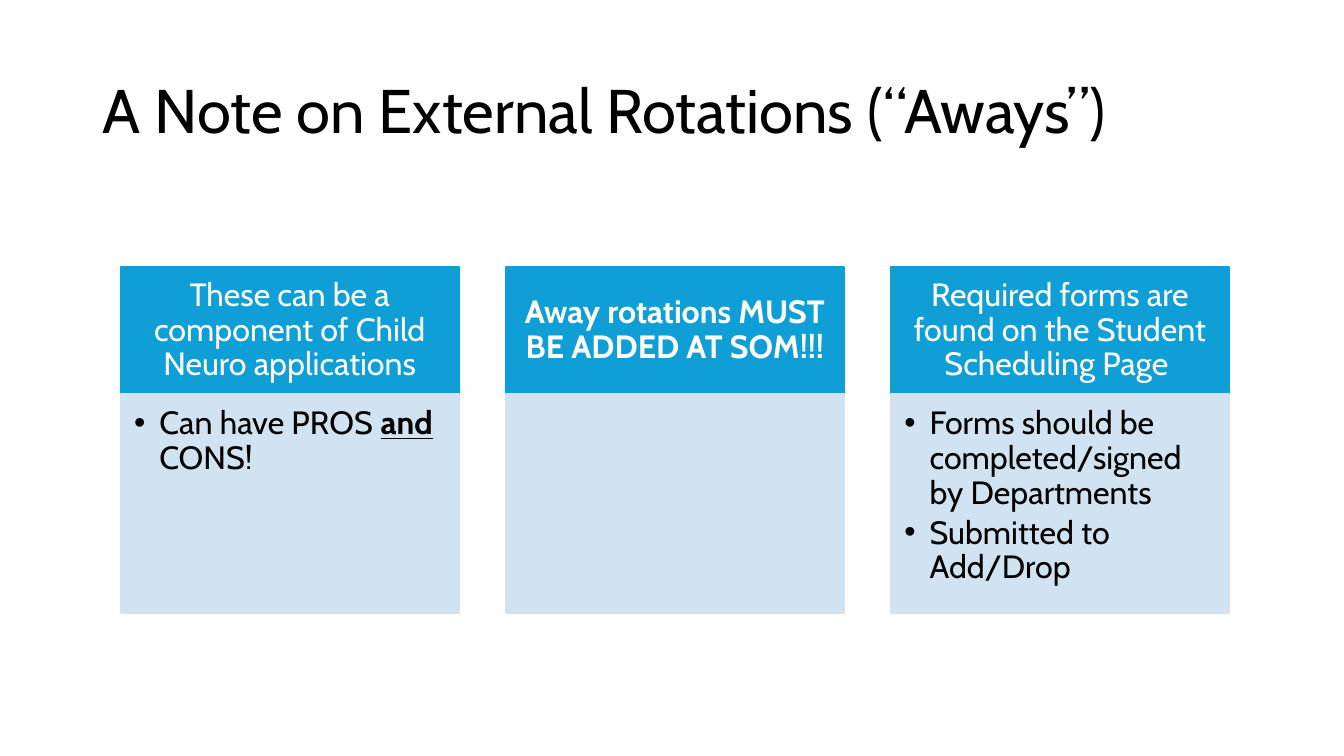
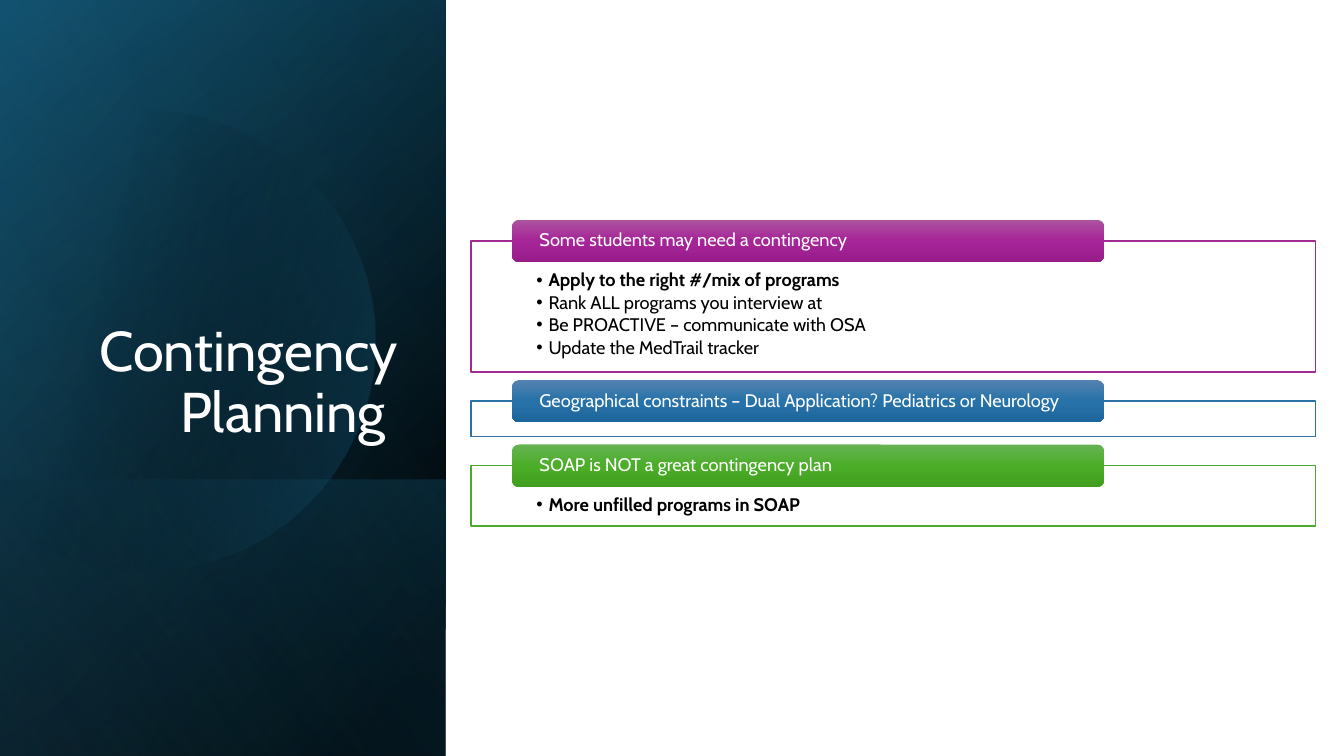
from dataclasses import dataclass

from lxml.etree import SubElement as Sub
from pptx import Presentation
from pptx.dml.color import RGBColor as Rgb
from pptx.enum.shapes import MSO_SHAPE as Kind
from pptx.enum.text import MSO_ANCHOR as Anchor, MSO_AUTO_SIZE as Fit, PP_ALIGN as Align
from pptx.oxml.ns import qn
from pptx.util import Inches, Pt

FONT = "Cabin"
HUES = {
    "black": "000000",
    "white": "FFFFFF",
    "head": "0F9ED5",
    "body": "D1E2F0",
    "navy": "104862",
    "teal": "156082",
    "sky": "46B1E1",
    "plum": "A02B93",
    "blue": "2C71A4",
    "green": "4EA72E",
}


@dataclass(frozen=True)
class Box:
    left: float
    top: float
    width: float
    height: float

    def lengths(self) -> list:
        return [Inches(n) for n in (self.left, self.top, self.width, self.height)]


@dataclass(frozen=True)
class Run:
    text: str
    bold: bool = False
    under: bool = False


@dataclass(frozen=True)
class Style:
    size: float
    hue: str
    inset: tuple = (0.1, 0.05, 0.1, 0.05)
    align: Align = Align.LEFT
    anchor: Anchor = Anchor.MIDDLE
    indent: float = 0


@dataclass(frozen=True)
class Stop:
    place: int
    hex: str
    alpha: int = 100


@dataclass(frozen=True)
class Layer:
    top: float
    angle: float
    stops: tuple


@dataclass(frozen=True)
class Card:
    head: Run
    points: tuple = ()


@dataclass(frozen=True)
class Band:
    head: str
    hue: str
    shades: tuple
    height: float
    points: tuple = ()


HEAD = Style(23, "white", (0.18, 0.1, 0.18, 0.1), Align.CENTER)
BODY = Style(23, "black", (0.13, 0.13, 0.18, 0.2), anchor=Anchor.TOP, indent=0.25)
BAR = Style(13, "white", (0.25, 0, 0.25, 0))
LIST = Style(13, "black", (0.65, 0.3, 0.65, 0.1), anchor=Anchor.TOP, indent=0.12)

CARDS = (
    Card(
        Run("These can be a component of Child Neuro applications"),
        ((Run("Can have PROS "), Run("and", True, True), Run(" CONS!")),),
    ),
    Card(Run("Away rotations MUST BE ADDED AT SOM!!! ", True)),
    Card(
        Run("Required forms are found on the Student Scheduling Page "),
        (
            (Run("Forms should be completed/signed by Departments"),),
            (Run("Submitted to Add/Drop"),),
        ),
    ),
)

BANDS = (
    Band(
        "Some students may need a contingency",
        "plum",
        ("AC53A0", "A62598", "991C8B"),
        1.3,
        (
            (Run("Apply to the right #/mix of programs", True),),
            (Run("Rank ALL programs you interview at"),),
            (Run("Be PROACTIVE – communicate with OSA"),),
            (Run("Update the MedTrail tracker"),),
        ),
    ),
    Band(
        "Geographical constraints – Dual Application? Pediatrics or Neurology",
        "blue",
        ("5382AF", "2772A9", "1D669C"),
        0.35,
    ),
    Band(
        "SOAP is NOT a great contingency plan",
        "green",
        ("66B354", "4BAD28", "409F1E"),
        0.6,
        ((Run("More unfilled programs in SOAP", True),),),
    ),
)

PANEL = (4.42, 7.5)
BACK = (
    Layer(0, 220, (Stop(8, HUES["black"]), Stop(100, HUES["navy"]))),
    Layer(0, 240, (Stop(0, HUES["black"], 0), Stop(99, HUES["teal"], 46))),
    Layer(4.76, 140, (Stop(2, HUES["teal"], 29), Stop(100, HUES["black"], 30))),
)
DISC = (Stop(29, HUES["black"], 0), Stop(100, HUES["teal"], 43))
GLOW = Layer(0, 150, (Stop(0, HUES["black"], 0), Stop(99, HUES["sky"], 11)))
CURVES = (
    ((1.49, 1.1), (2.46, 1.12), (3.35, 1.77), (3.63, 2.75)),
    ((3.63, 2.75), (3.98, 3.97), (3.28, 5.23), (2.07, 5.58)),
    ((2.07, 5.58), (1.31, 5.8), (0.53, 5.61), (0, 5.14)),
    ((0, 1.61), (0.23, 1.42), (0.5, 1.28), (0.8, 1.19)),
    ((0.8, 1.19), (1.03, 1.13), (1.26, 1.1), (1.49, 1.1)),
)


def tint(hue: str) -> Rgb:
    return Rgb.from_string(HUES[hue])


def shade(shape, stops: tuple, angle: float) -> None:
    shape.fill.solid()
    shape.line.fill.background()
    shape.shadow.inherit = False
    solid = shape.element.spPr.find(qn("a:solidFill"))
    grad = Sub(shape.element.spPr, qn("a:gradFill"), rotWithShape="1")
    items = Sub(grad, qn("a:gsLst"))
    for stop in stops:
        item = Sub(items, qn("a:gs"), pos=str(stop.place * 1000))
        color = Sub(item, qn("a:srgbClr"), val=stop.hex)
        if stop.alpha < 100:
            Sub(color, qn("a:alpha"), val=str(stop.alpha * 1000))
    Sub(grad, qn("a:lin"), ang=str(round(angle * 60000)), scaled="0")
    shape.element.spPr.replace(solid, grad)


def block(slide, box: Box, fill: str, line: str, weight: float):
    shape = slide.shapes.add_shape(Kind.RECTANGLE, *box.lengths())
    shape.shadow.inherit = False
    shape.fill.solid()
    shape.fill.fore_color.rgb = tint(fill)
    shape.line.color.rgb = tint(line)
    shape.line.width = Pt(weight)
    return shape


def write(shape, lines: tuple, style: Style) -> None:
    frame = shape.text_frame
    frame.word_wrap = True
    frame.auto_size = Fit.NONE
    frame.vertical_anchor = style.anchor
    sides = [Inches(n) for n in style.inset]
    frame.margin_left, frame.margin_top, frame.margin_right, frame.margin_bottom = sides
    for i, runs in enumerate(lines):
        para = frame.add_paragraph() if i else frame.paragraphs[0]
        para.alignment = style.align
        para.line_spacing = 0.9
        if style.indent:
            para.space_after = Pt(style.size * 0.15)
            props = para._p.get_or_add_pPr()
            props.set("marL", str(Inches(style.indent)))
            props.set("indent", str(-Inches(style.indent)))
            Sub(props, qn("a:buFont"), typeface="Arial")
            Sub(props, qn("a:buChar"), char="•")
        for part in runs:
            run = para.add_run()
            run.text = part.text
            font = run.font
            font.name, font.size = FONT, Pt(style.size)
            font.bold, font.underline = part.bold, part.under
            font.color.rgb = tint(style.hue)


def name(slide, text: str, box: Box, style: Style) -> None:
    title = slide.shapes.title
    title.left, title.top, title.width, title.height = box.lengths()
    write(title, ((Run(text),),), style)
    title.element.getparent().append(title.element)


def cover(slide, layer: Layer) -> None:
    box = Box(0, layer.top, PANEL[0], PANEL[1] - layer.top)
    shape = slide.shapes.add_shape(Kind.RECTANGLE, *box.lengths())
    shade(shape, layer.stops, layer.angle)


def trace(curve: tuple, steps: int = 16) -> list:
    spots = []
    for i in range(steps + 1):
        t = i / steps
        parts = ((1 - t) ** 3, 3 * t * (1 - t) ** 2, 3 * t * t * (1 - t), t ** 3)
        x, y = (sum(w * p[k] for w, p in zip(parts, curve)) for k in (0, 1))
        spots.append((Inches(x), Inches(y)))
    return spots


def draw_disc(slide) -> None:
    spots = [spot for curve in CURVES for spot in trace(curve)]
    path = slide.shapes.build_freeform(*spots[0])
    path.add_line_segments(spots[1:], close=True)
    shade(path.convert_to_shape(), DISC, 13.9)


def draw_card(slide, card: Card, left: float) -> None:
    head = block(slide, Box(left, 2.65, 3.35, 1.26), "head", "head", 1.5)
    write(head, ((card.head,),), HEAD)
    body = block(slide, Box(left, 3.91, 3.35, 2.17), "body", "body", 1.5)
    if card.points:
        write(body, card.points, BODY)


def draw_band(slide, band: Band, top: float) -> None:
    frame = block(slide, Box(4.67, top, 8.38, band.height), "white", band.hue, 1)
    if band.points:
        write(frame, band.points, LIST)
    box = Box(5.08, top - 0.21, 5.87, 0.42)
    bar = slide.shapes.add_shape(Kind.ROUNDED_RECTANGLE, *box.lengths())
    shade(bar, tuple(Stop(i * 50, c) for i, c in enumerate(band.shades)), 90)
    write(bar, ((Run(band.head),),), BAR)


def draw_aways(slide) -> None:
    name(slide, "A Note on External Rotations (“Aways”)",
         Box(0.92, 0.4, 11.5, 1.45), Style(44, "black"))
    for i, card in enumerate(CARDS):
        draw_card(slide, card, 1.2 + i * 3.82)


def draw_plan(slide) -> None:
    for layer in BACK:
        cover(slide, layer)
    draw_disc(slide)
    cover(slide, GLOW)
    name(slide, "Contingency Planning ", Box(0.64, 1.84, 3.41, 2.62),
         Style(40, "white", align=Align.RIGHT, anchor=Anchor.BOTTOM))
    top = 2.39
    for band in BANDS:
        draw_band(slide, band, top)
        top += band.height + 0.29


def main() -> None:
    deck = Presentation()
    deck.slide_width, deck.slide_height = Inches(13.33), Inches(7.5)
    for draw in (draw_aways, draw_plan):
        draw(deck.slides.add_slide(deck.slide_layouts[5]))
    deck.save("out.pptx")


if __name__ == "__main__":
    main()
